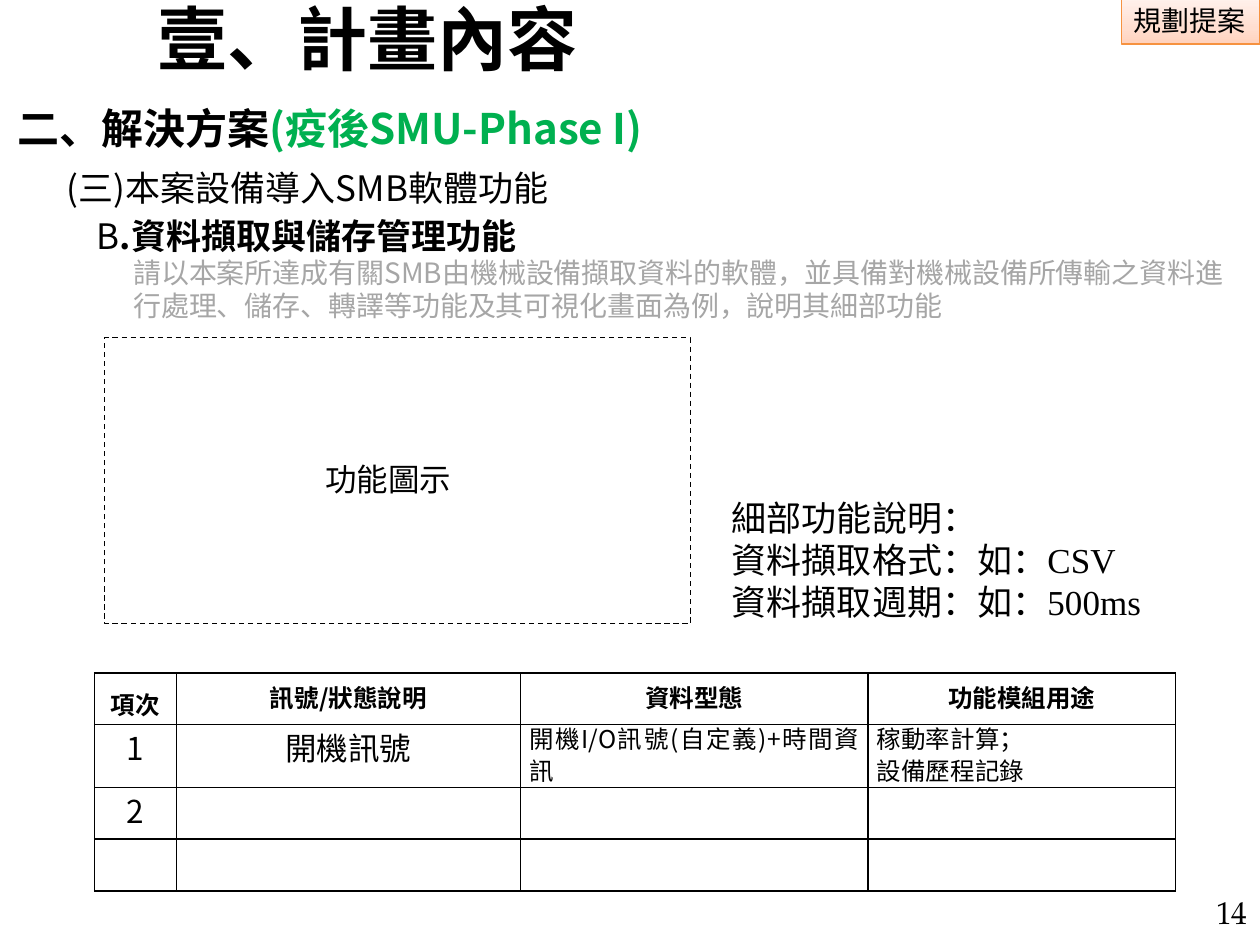
from pptx import Presentation
from pptx.util import Inches, Pt
from pptx.dml.color import RGBColor
from pptx.enum.dml import MSO_LINE
from pptx.enum.shapes import MSO_SHAPE
from pptx.enum.text import MSO_ANCHOR, MSO_AUTO_SIZE, PP_ALIGN
from pptx.oxml import parse_xml
from pptx.oxml.ns import nsdecls
from lxml import etree
from copy import deepcopy

SANS, SERIF, PAGE = "Noto Sans CJK SC", "Times New Roman", "TeX Gyre Pagella"
COLORS = {"ink": "000000", "paper": "FFFFFF", "green": "00B050", "hint": "A6A6A6",
          "badge_line": "F69240"}
BADGE_STOPS = [(0, "FFD2BD"), (0.35, "FFDED0"), (1, "FFF2ED")]
LEFT, CENTER, RIGHT, JUSTIFY = (PP_ALIGN.LEFT, PP_ALIGN.CENTER, PP_ALIGN.RIGHT,
                                PP_ALIGN.JUSTIFY)

# Content: each paragraph is a list of (text, run options)
TITLE = [[("壹、計畫內容", {"bold": True})]]
BADGE = [[("規劃提案", {})]]
FIGURE = [[("功能圖示", {})]]
PAGE_NUMBER = [[("14", {"font": PAGE})]]
# (box, size, line spacing, paragraphs)
TEXTS = [
    ((0.04, 0.76, 9.61, 0.63), 24, 29,
     [[("二、解決方案", {"bold": True}),
       ("(疫後SMU-Phase I)", {"bold": True, "color": "green"})]]),
    ((0.43, 1.27, 8.19, 0.44), 20, 24, [[("(三)本案設備導入SMB軟體功能", {})]]),
    ((0.67, 1.65, 8.98, 0.44), 20, 24,
     [[("B", {}), (".資料擷取與儲存管理功能", {"bold": True})]]),
    ((0.96, 1.98, 9.06, 0.64), 16, 19,
     [[("請以本案所達成有關SMB由機械設備擷取資料的軟體，並具備對機械設備所傳輸之資料進行處理、"
        "儲存、轉譯等功能及其可視化畫面為例，說明其細部功能", {"color": "hint"})]]),
    ((5.71, 3.89, 4.02, 1.11), 20, 24,
     [[("細部功能說明：", {})],
      [("資料擷取格式：", {}), ("如：CSV", {"font": SERIF})],
      [("資料擷取週期：", {}), ("如：500ms", {"font": SERIF})]]),
]
TABLE_BOX = (0.75, 5.34, 8.58, 1.72)
COL_WIDTHS = [0.65, 2.73, 2.76, 2.44]
ROW_HEIGHTS = [0.41, 0.5, 0.41, 0.41]
ROWS = [
    ["項次", "訊號/狀態說明", "資料型態", "功能模組用途"],
    ["1", "開機訊號", "開機I/O訊號(自定義)+時間資訊", "稼動率計算；\n設備歷程記錄"],
    ["2", "", "", ""],
    ["", "", "", ""],
]


def rgb(name):
    return RGBColor.from_string(COLORS[name])


def write(tf, paragraphs, size, align=LEFT, spacing=None):
    for i, runs in enumerate(paragraphs):
        p = tf.paragraphs[0] if i == 0 else tf.add_paragraph()
        p.alignment = align
        if spacing:
            p.line_spacing = Pt(spacing)
        for text, opts in runs:
            r = p.add_run()
            r.text = text
            r.font.size = Pt(size)
            r.font.bold = opts.get("bold", False)
            r.font.color.rgb = rgb(opts.get("color", "ink"))
            r.font.name = opts.get("font", SANS)
            r.font._element.append(parse_xml(f'<a:ea {nsdecls("a")} typeface="{SANS}"/>'))


def add_text(slide, box, size, spacing, paragraphs, align=LEFT):
    tf = slide.shapes.add_textbox(*map(Inches, box)).text_frame
    tf.word_wrap = True
    write(tf, paragraphs, size, align, spacing)
    return tf


def add_rect(slide, box):
    sp = slide.shapes.add_shape(MSO_SHAPE.RECTANGLE, *map(Inches, box))
    sp.shadow.inherit = False
    sp.fill.solid()
    sp.fill.fore_color.rgb = rgb("paper")
    sp.line.fill.background()
    sp.text_frame.vertical_anchor = MSO_ANCHOR.TOP
    return sp


def set_line(sp, color):
    sp.line.color.rgb = rgb(color)
    sp.line.width = Pt(0.75)


def set_borders(cell):
    tcPr = cell._tc.get_or_add_tcPr()
    for i, side in enumerate(("lnL", "lnR", "lnT", "lnB")):
        tcPr.insert(i, parse_xml(
            f'<a:{side} {nsdecls("a")} w="12700"><a:solidFill>'
            f'<a:srgbClr val="{COLORS["ink"]}"/></a:solidFill></a:{side}>'))


def add_badge(slide):
    sp = add_rect(slide, (8.9, -0.02, 1.1, 0.37))
    sp.fill.gradient()
    sp.fill.gradient_angle = 90
    stops = sp.fill._fill._gradFill.gsLst
    stops.insert(1, deepcopy(stops[0]))
    for gs, (pos, color) in zip(stops, BADGE_STOPS):
        gs.set("pos", str(int(pos * 100000)))
        for child in list(gs):
            gs.remove(child)
        etree.SubElement(gs, gs.tag.replace("}gs", "}srgbClr")).set("val", color)
    set_line(sp, "badge_line")
    sp.text_frame.word_wrap = False
    write(sp.text_frame, BADGE, 16, LEFT, 19)


def add_signal_table(slide):
    table = slide.shapes.add_table(len(ROWS), len(COL_WIDTHS),
                                   *map(Inches, TABLE_BOX)).table
    table.first_row = table.horz_banding = False
    for col, width in zip(table.columns, COL_WIDTHS):
        col.width = Inches(width)
    for row, height in zip(table.rows, ROW_HEIGHTS):
        row.height = Inches(height)
    for i, row in enumerate(ROWS):
        for j, text in enumerate(row):
            cell = table.cell(i, j)
            cell.fill.background()
            set_borders(cell)
            header, detail = i == 0, i == 1 and j > 1
            if header or detail:
                cell.margin_left = cell.margin_right = Inches(0.07)
                cell.margin_top = cell.margin_bottom = 0
            if header:
                cell.vertical_anchor = MSO_ANCHOR.MIDDLE
            if text:
                lines = [[(line, {"bold": header})] for line in text.split("\n")]
                spacing = 26 if header and j == 0 else 18 if header or detail else 22
                write(cell.text_frame, lines, 14 if header or detail else 18,
                      JUSTIFY if detail else CENTER, spacing)


def main():
    prs = Presentation()
    prs.slide_width, prs.slide_height = Inches(10), Inches(7.5)
    slide = prs.slides.add_slide(prs.slide_layouts[5])

    # Title
    title = slide.shapes.title
    title.left, title.top, title.width, title.height = map(
        Inches, (-0.43, -0.04, 6.69, 0.68))
    title.text_frame.auto_size = MSO_AUTO_SIZE.NONE
    title.text_frame.vertical_anchor = MSO_ANCHOR.MIDDLE
    write(title.text_frame, TITLE, 40, CENTER, 48)

    # Badge and page number
    add_badge(slide)
    tf = add_text(slide, (9.14, 7.11, 0.86, 0.39), 18, 12, PAGE_NUMBER, RIGHT)
    tf.vertical_anchor = MSO_ANCHOR.MIDDLE

    # Figure frame with its label
    frame = add_rect(slide, (0.83, 2.68, 4.65, 2.27))
    set_line(frame, "ink")
    frame.line.dash_style = MSO_LINE.DASH
    label = add_rect(slide, (1.93, 3.54, 2.3, 0.85))
    write(label.text_frame, FIGURE, 18, CENTER, 26)

    # Headings, hint and function notes
    for box, size, spacing, paragraphs in TEXTS:
        add_text(slide, box, size, spacing, paragraphs)

    add_signal_table(slide)
    prs.save("out.pptx")


if __name__ == "__main__":
    main()
